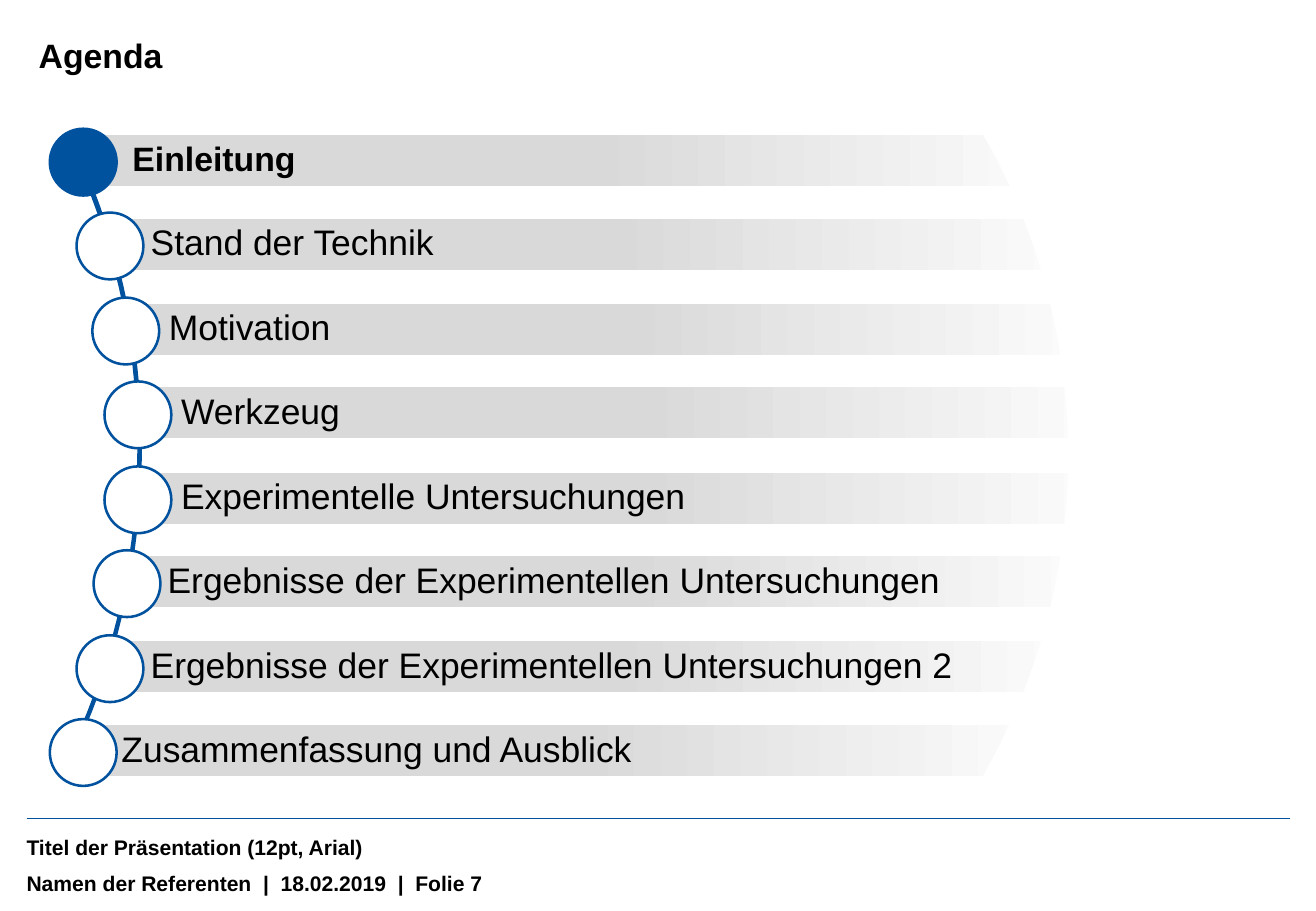
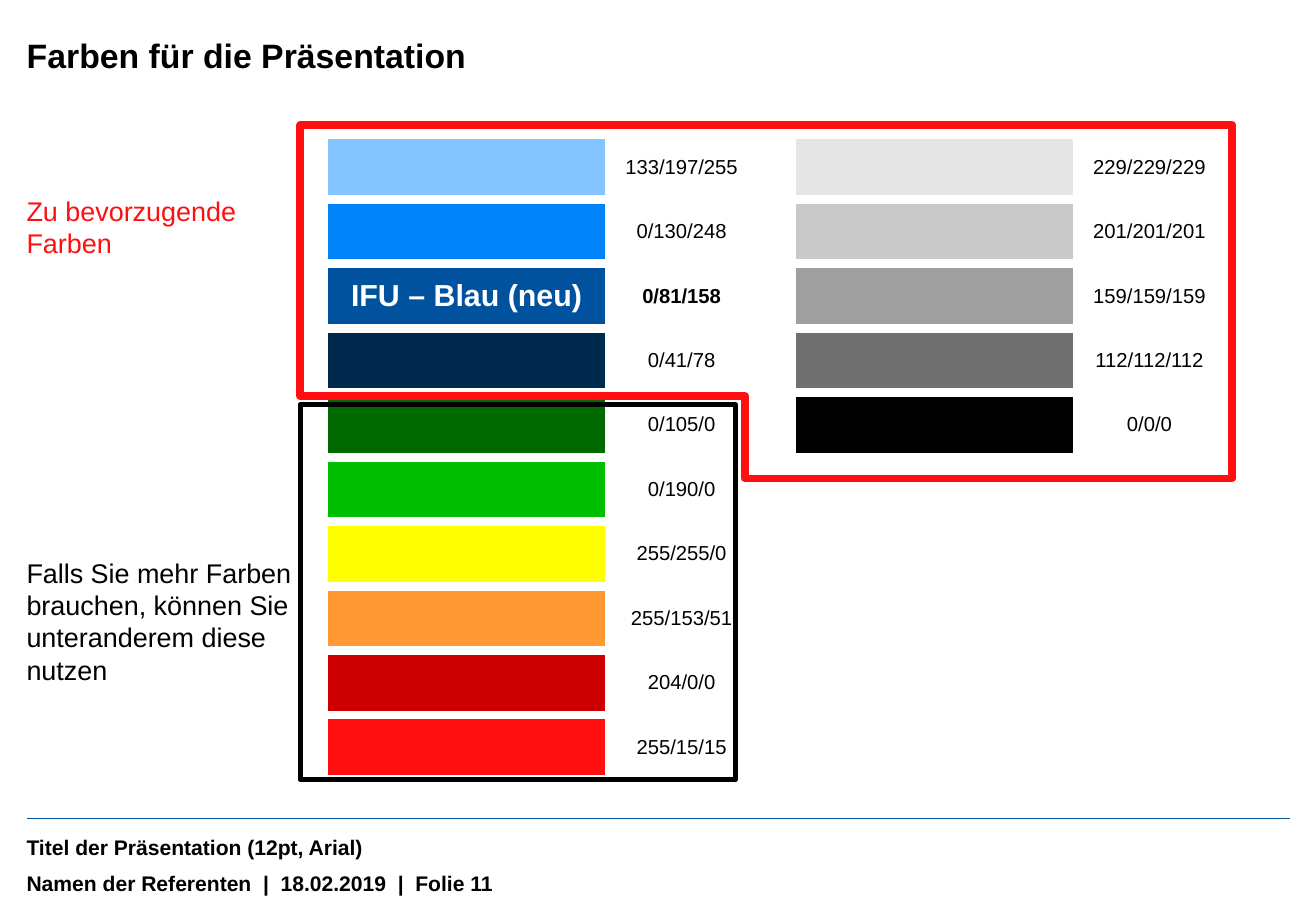
from dataclasses import dataclass
from typing import NamedTuple

from lxml.etree import SubElement
from pptx import Presentation
from pptx.dml.color import RGBColor
from pptx.enum.shapes import MSO_CONNECTOR, MSO_SHAPE
from pptx.enum.text import MSO_ANCHOR, PP_ALIGN
from pptx.oxml import parse_xml
from pptx.oxml.ns import nsdecls, qn
from pptx.presentation import Presentation as Deck
from pptx.shapes.autoshape import Shape
from pptx.slide import Slide
from pptx.table import _Cell as Cell
from pptx.text.text import TextFrame
from pptx.util import Emu, Pt

PX = 9144  # EMU in one px, 100 px to the inch
FONT = "Arial"
COLORS = {
    "blue": "00519E",
    "red": "FF0F0F",
    "black": "000000",
    "white": "FFFFFF",
    "bar": "D9D9D9",
}
Point = tuple[float, float]


class Box(NamedTuple):
    left: int
    top: int
    width: int
    height: int


class Insets(NamedTuple):
    left: int = 10
    top: int = 5
    right: int = 10
    bottom: int = 5


@dataclass
class Style:
    size: float
    color: str = "black"
    bold: bool = False


@dataclass
class AgendaItem:
    text: str
    bar_left: int
    circle_left: int
    active: bool = False


@dataclass
class Swatch:
    label: str
    name: str = ""

    @property
    def color(self) -> RGBColor:
        return RGBColor(*map(int, self.label.split("/")))


TITLE = Style(20, bold=True)
FOOTER = Style(12.5, bold=True)
DATE = "18.02.2019"

AGENDA = [
    AgendaItem("Einleitung", 74, 41, active=True),
    AgendaItem("Stand der Technik", 89, 63),
    AgendaItem("Motivation", 104, 76),
    AgendaItem("Werkzeug", 114, 86),
    AgendaItem("Experimentelle Untersuchungen", 114, 86),
    AgendaItem("Ergebnisse der Experimentellen Untersuchungen", 103, 77),
    AgendaItem("Ergebnisse der Experimentellen Untersuchungen 2", 89, 63),
    AgendaItem("Zusammenfassung und Ausblick", 65, 41),
]
AGENDA_TOP, AGENDA_LAST_TOP = 111, 597

COLOR_SWATCHES = [
    Swatch("133/197/255"),
    Swatch("0/130/248"),
    Swatch("0/81/158", "IFU – Blau (neu)"),
    Swatch("0/41/78"),
    Swatch("0/105/0"),
    Swatch("0/190/0"),
    Swatch("255/255/0"),
    Swatch("255/153/51"),
    Swatch("204/0/0"),
    Swatch("255/15/15"),
]
GRAY_SWATCHES = [Swatch("/".join([str(level)] * 3)) for level in (229, 201, 159, 112, 0)]


# Basic parts
def rgb(name: str) -> RGBColor:
    return RGBColor.from_string(COLORS[name])


def emu(length: float) -> Emu:
    return Emu(round(length * PX))


def write(frame: TextFrame, text: str, style: Style,
          align: PP_ALIGN = PP_ALIGN.LEFT, spacing: float = 1.0) -> None:
    para = frame.paragraphs[0]
    para.alignment = align
    para.line_spacing = spacing
    span = para.add_run()
    span.text = text
    span.font.name = FONT
    span.font.size = Pt(style.size)
    span.font.bold = style.bold
    span.font.color.rgb = rgb(style.color)


def set_up(frame: TextFrame, anchor: MSO_ANCHOR, insets: Insets) -> None:
    frame.word_wrap = True
    frame.vertical_anchor = anchor
    frame.margin_left, frame.margin_top, frame.margin_right, frame.margin_bottom = map(emu, insets)


def add_text(page: Slide, box: Box, text: str, style: Style,
             anchor: MSO_ANCHOR = MSO_ANCHOR.TOP, insets: Insets = Insets()) -> None:
    frame = page.shapes.add_textbox(*map(emu, box)).text_frame
    set_up(frame, anchor, insets)
    write(frame, text, style)


def paint(shape: Shape, fill: str = "", line: str = "", width: float = 1) -> None:
    shape.shadow.inherit = False
    if fill:
        shape.fill.solid()
        shape.fill.fore_color.rgb = rgb(fill)
    else:
        shape.fill.background()
    if line:
        shape.line.color.rgb = rgb(line)
        shape.line.width = Pt(width)
    else:
        shape.line.fill.background()


def add_outline(page: Slide, points: list[Point]) -> Shape:
    corners = [(emu(x), emu(y)) for x, y in points]
    builder = page.shapes.build_freeform(*corners[0])
    builder.add_line_segments(corners[1:], close=True)
    return builder.convert_to_shape()


def curve(a: Point, b: Point, c: Point, d: Point, steps: int = 30) -> list[Point]:
    """Points along a cubic curve from a to d."""
    points = []
    for step in range(steps + 1):
        t = step / steps
        weights = ((1 - t) ** 3, 3 * t * (1 - t) ** 2, 3 * t * t * (1 - t), t ** 3)
        x, y = (sum(w * v for w, v in zip(weights, axis)) for axis in zip(a, b, c, d))
        points.append((x, y))
    return points


# Shared title, rule and footer
def add_page(deck: Deck, title: str, number: int, title_insets: Insets = Insets()) -> Slide:
    page = deck.slides.add_slide(deck.slide_layouts[6])
    add_text(page, Box(12, 682, 672, 30), "Titel der Präsentation (12pt, Arial)",
             FOOTER, MSO_ANCHOR.MIDDLE)
    add_text(page, Box(12, 712, 719, 31),
             f"Namen der Referenten  |  {DATE}  |  Folie {number}", FOOTER)
    rule = page.shapes.add_connector(
        MSO_CONNECTOR.STRAIGHT, *map(emu, (22, 674, 1062, 674)))
    rule.line.color.rgb = rgb("blue")
    rule.line.width = Pt(1)
    SubElement(rule._element.spPr, qn("a:effectLst"))
    add_text(page, Box(22, 24, 1040, 37), title, TITLE, insets=title_insets)
    return page


# Agenda
def add_agenda_item(page: Slide, item: AgendaItem, top: int) -> None:
    bar = page.shapes.add_shape(
        MSO_SHAPE.RECTANGLE, *map(emu, Box(item.bar_left, top, 827, 42)))
    paint(bar)
    bar.fill.gradient()
    bar.fill.gradient_angle = 0
    for stop, position, color in zip(bar.fill.gradient_stops, (0.5, 1), ("bar", "white")):
        stop.position = position
        stop.color.rgb = rgb(color)
    set_up(bar.text_frame, MSO_ANCHOR.MIDDLE, Insets(35, 6, 6, 6))
    style = Style(20, bold=True) if item.active else Style(21)
    write(bar.text_frame, item.text, style, spacing=0.9)

    circle = page.shapes.add_shape(
        MSO_SHAPE.OVAL, *map(emu, Box(item.circle_left, top - 5, 55, 55)))
    paint(circle, "blue" if item.active else "white", "blue", 1.5)


def build_agenda(deck: Deck) -> None:
    page = add_page(deck, "Agenda", 7)
    arc = [(53, 113), (58, 113),
           *curve((63, 122), (135, 279), (135, 461), (62, 618)),
           (58, 626), (54, 626),
           *curve((59, 616), (128, 467), (131, 295), (68, 144))]
    paint(add_outline(page, arc), "blue")

    step = (AGENDA_LAST_TOP - AGENDA_TOP) / (len(AGENDA) - 1)
    for index, item in enumerate(AGENDA):
        add_agenda_item(page, item, round(AGENDA_TOP + index * step))

    # Rounded right end of the bars
    cover = [(809, 111), (1082, 111), (1082, 639), (809, 639),
             *curve((816, 626), (856, 552), (879, 466), (879, 375)),
             *curve((879, 375), (879, 284), (856, 198), (816, 123))]
    paint(add_outline(page, cover), "white")


# Colour tables
def finish_cell(cell: Cell, fill: RGBColor) -> None:
    cell.vertical_anchor = MSO_ANCHOR.MIDDLE
    cell.fill.solid()
    cell.fill.fore_color.rgb = fill
    properties = cell._tc.get_or_add_tcPr()
    for index, side in enumerate(("lnL", "lnR", "lnT", "lnB")):
        properties.insert(index, parse_xml(
            f'<a:{side} {nsdecls("a")} w="{Pt(6)}"><a:solidFill>'
            f'<a:srgbClr val="{COLORS["white"]}"/></a:solidFill></a:{side}>'))


def add_swatches(page: Slide, left: int, swatches: list[Swatch]) -> None:
    count = len(swatches)
    frame = page.shapes.add_table(
        count, 2, *map(emu, (left, 111, 354, 53.1 * count)))
    table = frame.table
    table.first_row = table.horz_banding = False
    for column, width in zip(table.columns, (236, 118)):
        column.width = emu(width)
    for row, swatch in enumerate(swatches):
        sample, label = table.cell(row, 0), table.cell(row, 1)
        finish_cell(sample, swatch.color)
        finish_cell(label, rgb("white"))
        if swatch.name:
            write(sample.text_frame, swatch.name, Style(18, "white", True), PP_ALIGN.CENTER)
        write(label.text_frame, swatch.label, Style(12, bold=bool(swatch.name)), PP_ALIGN.CENTER)


def build_colors(deck: Deck) -> None:
    page = add_page(deck, "Farben für die Präsentation", 11, Insets(left=0))
    add_swatches(page, 266, COLOR_SWATCHES)
    add_swatches(page, 651, GRAY_SWATCHES)

    # Frames around the two groups
    preferred = [(247, 103), (247, 326), (613, 326), (613, 394), (1014, 394), (1014, 103)]
    paint(add_outline(page, preferred), line="red", width=4.5)
    extra = page.shapes.add_shape(MSO_SHAPE.RECTANGLE, *map(emu, Box(247, 333, 358, 309)))
    paint(extra, line="black", width=3)

    add_text(page, Box(12, 155, 207, 64), "Zu bevorzugende Farben", Style(16, "red"))
    add_text(page, Box(12, 453, 250, 118),
             "Falls Sie mehr Farben brauchen, können Sie unteranderem diese nutzen", Style(16))


def main() -> None:
    deck = Presentation()
    deck.slide_width, deck.slide_height = emu(1083), emu(750)
    build_agenda(deck)
    build_colors(deck)
    deck.save("out.pptx")


if __name__ == "__main__":
    main()
